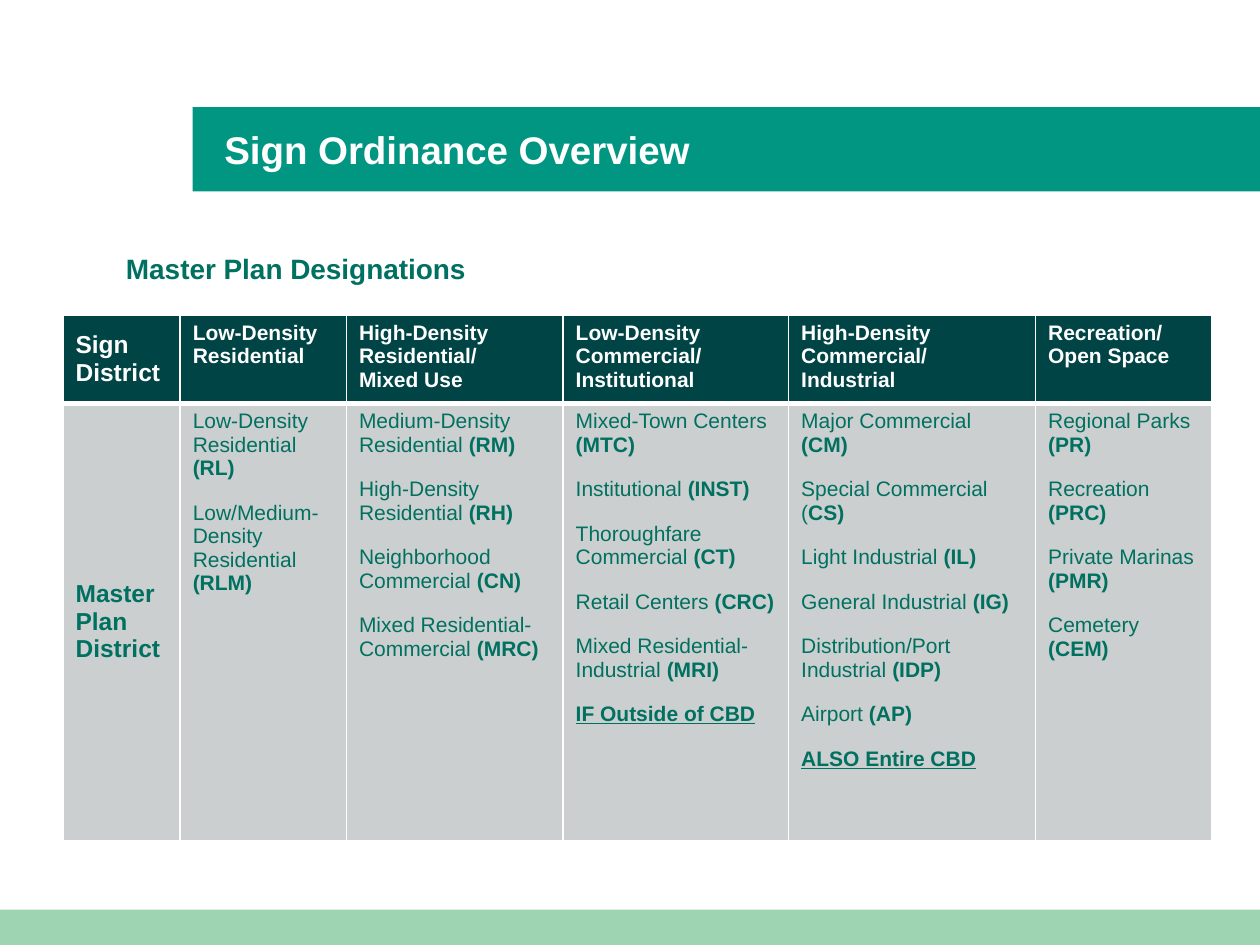
from dataclasses import dataclass

from lxml import etree
from pptx import Presentation
from pptx.dml.color import RGBColor
from pptx.enum.shapes import MSO_SHAPE
from pptx.enum.text import MSO_ANCHOR, MSO_AUTO_SIZE, PP_ALIGN
from pptx.oxml.ns import qn
from pptx.util import Inches, Pt

RECTANGLE = MSO_SHAPE.RECTANGLE
TOP, MIDDLE = MSO_ANCHOR.TOP, MSO_ANCHOR.MIDDLE
NO_AUTOFIT = MSO_AUTO_SIZE.NONE
LEFT = PP_ALIGN.LEFT
TITLE_ONLY = 5


@dataclass(frozen=True)
class Theme:
    font: str = "Arial"
    white: str = "FFFFFF"
    banner: str = "009681"
    footer: str = "9FD4B3"
    ink: str = "007061"
    header: str = "004445"
    body: str = "CCCFCF"
    title_size: int = 22
    subtitle_size: int = 16
    label_size: int = 14
    cell_size: int = 12
    gap: int = 12
    thin: int = 1
    thick: int = 3


THEME = Theme()

COLUMN_WIDTHS = [0.93, 1.32, 1.72, 1.79, 1.96, 1.4]
ROW_HEIGHTS = [0.7, 3.47]
HEADERS = [
    ["Low-Density Residential"],
    ["High-Density Residential/", "Mixed Use"],
    ["Low-Density Commercial/ Institutional"],
    ["High-Density Commercial/ Industrial"],
    ["Recreation/", "Open Space"],
]
DISTRICTS = [
    [("Low-Density Residential ", "(RL)"),
     ("Low/Medium-Density Residential ", "(RLM)")],
    [("Medium-Density Residential ", "(RM)"),
     ("High-Density Residential ", "(RH)"),
     ("Neighborhood Commercial ", "(CN)"),
     ("Mixed Residential-Commercial ", "(MRC)")],
    [("Mixed-Town Centers ", "(MTC)"),
     ("Institutional ", "(INST)"),
     ("Thoroughfare Commercial ", "(CT)"),
     ("Retail Centers ", "(CRC)"),
     ("Mixed Residential-Industrial ", "(MRI)"),
     "IF Outside of CBD"],
    [("Major Commercial ", "(CM)"),
     ("Special Commercial (", "CS)"),
     ("Light Industrial ", "(IL)"),
     ("General Industrial ", "(IG)"),
     ("Distribution/Port Industrial ", "(IDP)"),
     ("Airport ", "(AP)"),
     "ALSO Entire CBD"],
    [("Regional Parks ", "(PR)"),
     ("Recreation ", "(PRC)"),
     ("Private Marinas ", "(PMR)"),
     ("Cemetery ", "(CEM)")],
]


def add_text(paragraph, text, *, size, color, bold=True, underline=False):
    run = paragraph.add_run()
    run.text = text
    font = run.font
    font.name = THEME.font
    font.size = Pt(size)
    font.bold = bold
    font.underline = underline
    font.color.rgb = RGBColor.from_string(color)


def next_paragraph(frame, index):
    return frame.add_paragraph() if index else frame.paragraphs[0]


def clear_margins(frame):
    frame.margin_left = frame.margin_right = 0
    frame.margin_top = frame.margin_bottom = 0
    frame.word_wrap = True


def add_bar(slide, left, top, width, height, color):
    bar = slide.shapes.add_shape(
        RECTANGLE, Inches(left), Inches(top), Inches(width), Inches(height))
    bar.shadow.inherit = False
    bar.fill.solid()
    bar.fill.fore_color.rgb = RGBColor.from_string(color)
    bar.line.fill.background()


def add_title(slide, text):
    title = slide.shapes.title
    title.left, title.top = Inches(1.78), Inches(0.85)
    title.width, title.height = Inches(7.64), Inches(0.67)
    frame = title.text_frame
    clear_margins(frame)
    frame.auto_size = NO_AUTOFIT
    frame.vertical_anchor = MIDDLE
    paragraph = frame.paragraphs[0]
    paragraph.alignment = LEFT
    add_text(paragraph, text, size=THEME.title_size, color=THEME.white)
    title._element.getparent().append(title._element)


def add_subtitle(slide, text):
    box = slide.shapes.add_textbox(Inches(1), Inches(2), Inches(8), Inches(0.27))
    clear_margins(box.text_frame)
    paragraph = box.text_frame.paragraphs[0]
    paragraph.space_after = Pt(THEME.gap)
    add_text(paragraph, text, size=THEME.subtitle_size, color=THEME.ink)


def style_cell(cell, fill, anchor, top_border, bottom_border):
    cell.vertical_anchor = anchor
    properties = cell._tc.get_or_add_tcPr()
    borders = {"a:lnL": THEME.thin, "a:lnR": THEME.thin,
               "a:lnT": top_border, "a:lnB": bottom_border}
    for tag, width in borders.items():
        line = etree.SubElement(properties, qn(tag), w=str(Pt(width)))
        solid = etree.SubElement(line, qn("a:solidFill"))
        etree.SubElement(solid, qn("a:srgbClr"), val=THEME.white)
    cell.fill.solid()
    cell.fill.fore_color.rgb = RGBColor.from_string(fill)


def fill_header(cell, lines, size=THEME.cell_size, anchor=TOP):
    style_cell(cell, THEME.header, anchor, THEME.thin, THEME.thick)
    for index, line in enumerate(lines):
        add_text(next_paragraph(cell.text_frame, index), line,
                 size=size, color=THEME.white)


def fill_districts(cell, districts):
    style_cell(cell, THEME.body, TOP, THEME.thick, THEME.thin)
    look = {"size": THEME.cell_size, "color": THEME.ink}
    for index, district in enumerate(districts):
        paragraph = next_paragraph(cell.text_frame, index)
        paragraph.space_after = Pt(THEME.gap)
        if isinstance(district, str):
            add_text(paragraph, district, underline=True, **look)
        else:
            name, code = district
            add_text(paragraph, name, bold=False, **look)
            add_text(paragraph, code, **look)


def add_district_table(slide):
    table = slide.shapes.add_table(
        len(ROW_HEIGHTS), len(COLUMN_WIDTHS), Inches(0.5), Inches(2.5),
        Inches(sum(COLUMN_WIDTHS)), Inches(sum(ROW_HEIGHTS))).table
    table.horz_banding = False
    for column, width in zip(table.columns, COLUMN_WIDTHS):
        column.width = Inches(width)
    for row, height in zip(table.rows, ROW_HEIGHTS):
        row.height = Inches(height)

    fill_header(table.cell(0, 0), ["Sign District"], THEME.label_size, MIDDLE)
    label = table.cell(1, 0)
    style_cell(label, THEME.body, MIDDLE, THEME.thick, THEME.thin)
    add_text(label.text_frame.paragraphs[0], "Master Plan District",
             size=THEME.label_size, color=THEME.ink)
    for column, (header, districts) in enumerate(zip(HEADERS, DISTRICTS), 1):
        fill_header(table.cell(0, column), header)
        fill_districts(table.cell(1, column), districts)


def main():
    presentation = Presentation()
    presentation.slide_width = Inches(10)
    presentation.slide_height = Inches(7.5)
    slide = presentation.slides.add_slide(presentation.slide_layouts[TITLE_ONLY])
    add_bar(slide, 1.53, 0.85, 8.47, 0.67, THEME.banner)
    add_bar(slide, 0, 7.22, 10, 0.28, THEME.footer)
    add_title(slide, "Sign Ordinance Overview")
    add_subtitle(slide, "Master Plan Designations")
    add_district_table(slide)
    presentation.save("out.pptx")


if __name__ == "__main__":
    main()
